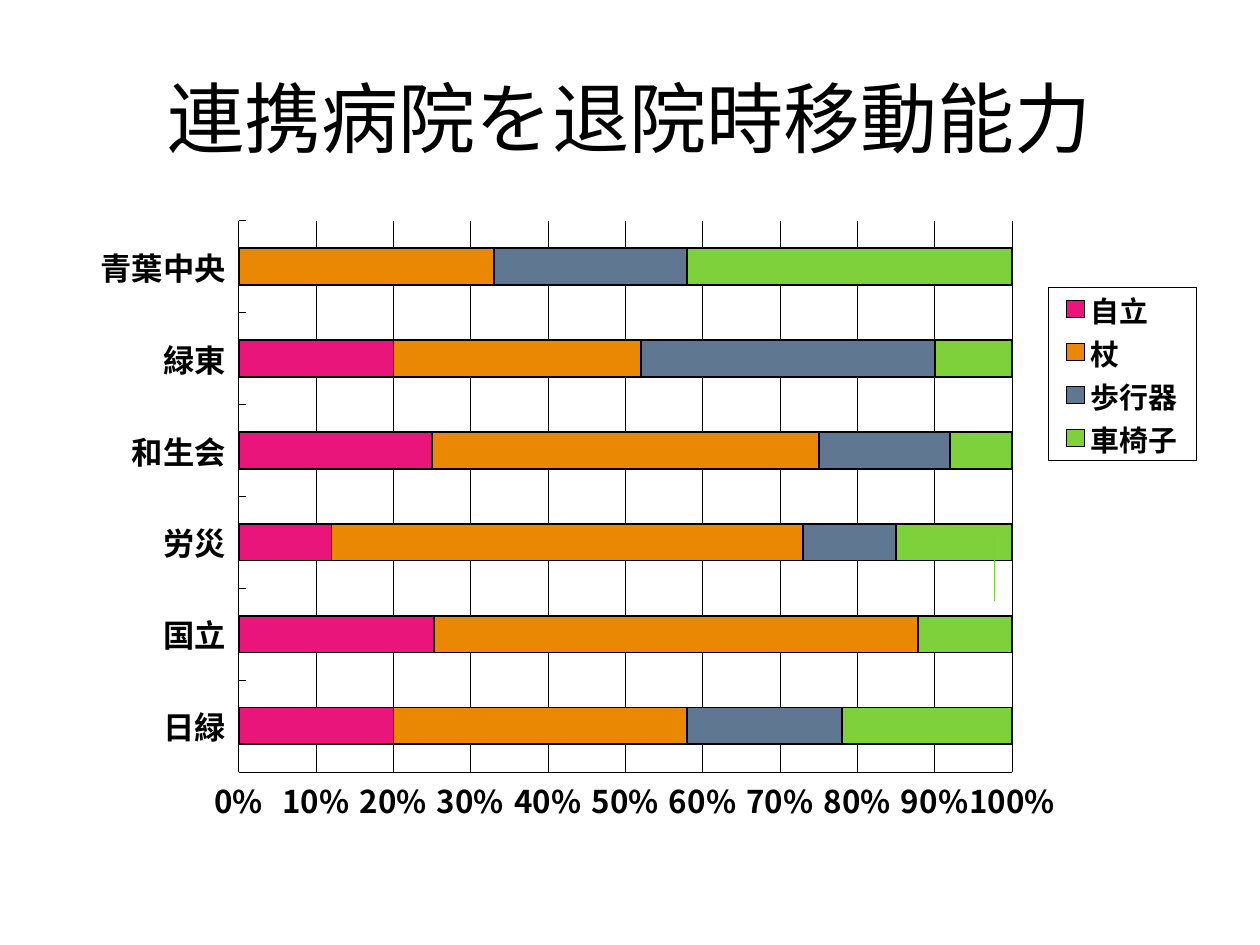
from pptx import Presentation
from pptx.chart.data import CategoryChartData
from pptx.dml.color import RGBColor
from pptx.enum.chart import XL_CHART_TYPE, XL_LEGEND_POSITION, XL_TICK_LABEL_POSITION, XL_TICK_MARK
from pptx.enum.shapes import MSO_CONNECTOR
from pptx.enum.text import MSO_ANCHOR, PP_ALIGN
from pptx.oxml import parse_xml
from pptx.oxml.ns import nsdecls, qn
from pptx.util import Inches, Pt

STACKED_BAR = XL_CHART_TYPE.BAR_STACKED_100
LEGEND_RIGHT = XL_LEGEND_POSITION.RIGHT
LABELS_LOW = XL_TICK_LABEL_POSITION.LOW
TICK_INSIDE = XL_TICK_MARK.INSIDE
TICK_NONE = XL_TICK_MARK.NONE
ELBOW = MSO_CONNECTOR.ELBOW
MIDDLE = MSO_ANCHOR.MIDDLE
CENTER = PP_ALIGN.CENTER

WIDTH, HEIGHT = Inches(10), Inches(7.5)
TITLE_ONLY = 5
COLORS = {
    "text": "000000",
    "自立": "EA157A",
    "杖": "EB8803",
    "歩行器": "5F7791",
    "車椅子": "7FD13B",
    "marker": "7CD036",
}
HOSPITALS = ["日緑", "国立", "労災", "和生会", "緑東", "青葉中央"]
MOBILITY = {
    "自立": [20, 25, 12, 25, 20, None],
    "杖": [38, 62, 61, 50, 32, 33],
    "歩行器": [20, 0, 12, 17, 38, 25],
    "車椅子": [22, 12, 15, 8, 10, 42],
}
TITLE_FONT = {"name": "Calibri", "size": Pt(44)}
AXIS_FONT = {"name": "Noto Sans CJK JP", "size": Pt(17.9), "bold": True}
LEGEND_FONT = {**AXIS_FONT, "size": Pt(16.5)}
PLOT_SHARE = (0.155, 0, 0.682, 0.886)
LEGEND_SHARE = (0.869, 0.107, 0.13, 0.278)


def color(name):
    return RGBColor.from_string(COLORS[name])


def format_font(font, values):
    for attribute, value in values.items():
        setattr(font, attribute, value)
    font.color.rgb = color("text")


def format_line(line, name, width):
    line.color.rgb = color(name)
    line.width = Pt(width)


def layout_xml(share, target=""):
    names = ("x", "y", "w", "h")
    modes = "".join(f'<c:{name}Mode val="edge"/>' for name in names[:2])
    values = "".join(f'<c:{name} val="{value}"/>' for name, value in zip(names, share))
    return parse_xml(
        f"<c:layout {nsdecls('c')}><c:manualLayout>{target}{modes}{values}"
        "</c:manualLayout></c:layout>"
    )


def remove_layout(element):
    for layout in element.findall(qn("c:layout")):
        element.remove(layout)


def add_title(slide, text):
    title = slide.shapes.title
    title.left, title.top = int(WIDTH * 0.05), int(HEIGHT * 0.04)
    title.width, title.height = int(WIDTH * 0.9), Inches(1.25)
    title.text_frame.text = text
    title.text_frame.vertical_anchor = MIDDLE
    paragraph = title.text_frame.paragraphs[0]
    paragraph.alignment = CENTER
    format_font(paragraph.runs[0].font, TITLE_FONT)


def format_axis(axis):
    axis.major_tick_mark = TICK_INSIDE
    axis.minor_tick_mark = TICK_NONE
    format_font(axis.tick_labels.font, AXIS_FONT)
    format_line(axis.format.line, "text", 0.25)


def format_legend(chart):
    chart.has_legend = True
    legend = chart.legend
    legend.position = LEGEND_RIGHT
    legend.include_in_layout = False
    format_font(legend.font, LEGEND_FONT)
    element = legend._element
    remove_layout(element)
    overlay = element.find(qn("c:overlay"))
    overlay.addprevious(layout_xml(LEGEND_SHARE))
    overlay.addnext(parse_xml(
        f"<c:spPr {nsdecls('c', 'a')}><a:ln w=\"{Pt(0.25)}\"><a:solidFill>"
        f'<a:srgbClr val="{COLORS["text"]}"/></a:solidFill></a:ln></c:spPr>'
    ))


def add_mobility_chart(slide):
    data = CategoryChartData(number_format="General")
    data.categories = HOSPITALS
    for name, values in MOBILITY.items():
        data.add_series(name, values)
    chart = slide.shapes.add_chart(
        STACKED_BAR, int(WIDTH * 0.05), Inches(1.75), int(WIDTH * 0.9), Inches(4.94), data
    ).chart
    chart.has_title = False
    format_font(chart.font, AXIS_FONT)

    plot = chart.plots[0]
    plot.gap_width, plot.overlap = 150, 100
    for series in plot.series:
        series.format.fill.solid()
        series.format.fill.fore_color.rgb = color(series.name)
        format_line(series.format.line, "text", 1)

    for axis in (chart.category_axis, chart.value_axis):
        format_axis(axis)
    chart.category_axis.tick_label_position = LABELS_LOW
    value_axis = chart.value_axis
    value_axis.major_unit = 0.1
    value_axis.tick_labels.number_format = "0%"
    value_axis.tick_labels.number_format_is_linked = False
    value_axis.has_major_gridlines = True
    format_line(value_axis.major_gridlines.format.line, "text", 0.25)

    format_legend(chart)
    plot_area = chart._chartSpace.chart.plotArea
    remove_layout(plot_area)
    plot_area.insert(0, layout_xml(PLOT_SHARE, '<c:layoutTarget val="inner"/>'))


def add_marker(slide, x, top, bottom):
    half, middle = (bottom - top) / 2, (top + bottom) / 2
    connector = slide.shapes.add_connector(
        ELBOW, Inches(x - half), Inches(middle), Inches(x + half), Inches(middle)
    )
    format_line(connector.line, "marker", 0.75)
    properties = connector._element.spPr
    properties.find(qn("a:xfrm")).set("rot", str(90 * 60000))
    properties.append(parse_xml(f"<a:effectLst {nsdecls('a')}/>"))


def main():
    presentation = Presentation()
    presentation.slide_width, presentation.slide_height = WIDTH, HEIGHT
    slide = presentation.slides.add_slide(presentation.slide_layouts[TITLE_ONLY])
    add_title(slide, "連携病院を退院時移動能力")
    add_mobility_chart(slide)
    add_marker(slide, 7.89, 4.22, 4.77)
    presentation.save("out.pptx")


if __name__ == "__main__":
    main()
